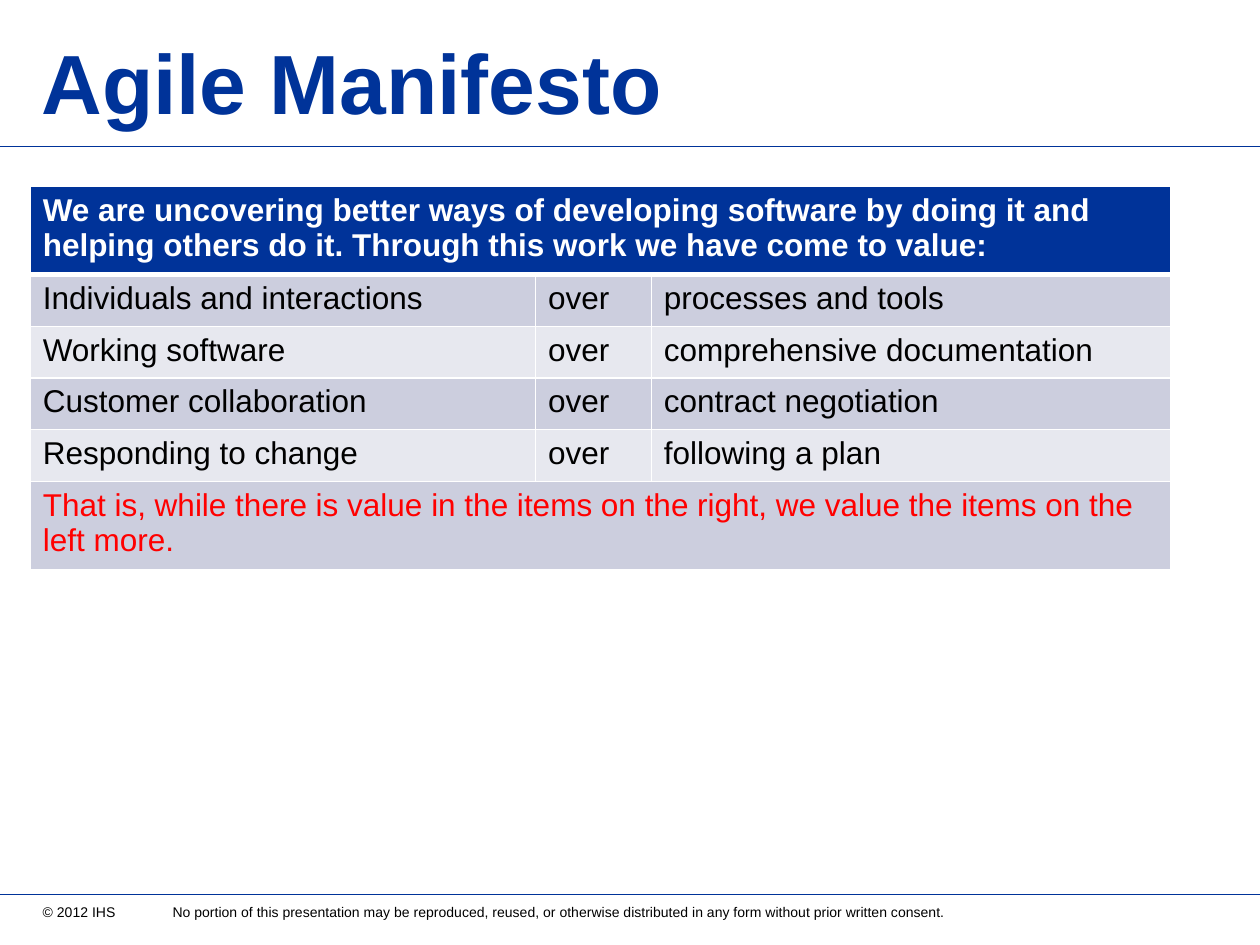
from dataclasses import dataclass

from lxml import etree
from pptx import Presentation
from pptx.dml.color import RGBColor
from pptx.enum.shapes import MSO_CONNECTOR
from pptx.enum.text import MSO_ANCHOR, MSO_AUTO_SIZE
from pptx.oxml.ns import qn
from pptx.util import Inches, Pt

STRAIGHT = MSO_CONNECTOR.STRAIGHT
BOTTOM, TOP = MSO_ANCHOR.BOTTOM, MSO_ANCHOR.TOP
FIT_SHAPE, NO_FIT = MSO_AUTO_SIZE.SHAPE_TO_FIT_TEXT, MSO_AUTO_SIZE.NONE

SLIDE_WIDTH, SLIDE_HEIGHT = 10, 7.5
RULE_HEIGHTS = (1.16, 7.1)
COLORS = {
    "navy": "003399",
    "white": "FFFFFF",
    "black": "000000",
    "red": "FF0000",
    "dark band": "CCCEDE",
    "light band": "E7E8EF",
}

TABLE_LEFT, TABLE_TOP = 0.24, 1.48
COLUMN_WIDTHS = (4.01, 0.92, 4.12)
ROW_HEIGHT, TWO_LINE_HEIGHT = 0.41, 0.65
THIN_BORDER, HEADER_BORDER = 1, 3


@dataclass(frozen=True)
class TextStyle:
    size: float
    color: str
    bold: bool = False


@dataclass(frozen=True)
class Label:
    text: str
    box: tuple[float, float, float, float]
    style: TextStyle
    frame: dict


@dataclass(frozen=True)
class TableRow:
    texts: tuple[str, ...]
    style: TextStyle
    fill: str

    @property
    def is_merged(self) -> bool:
        return len(self.texts) == 1


BODY = TextStyle(18, "black")
LABELS = (
    Label(
        "© 2012 IHS \t No portion of this presentation may be reproduced, reused, "
        "or otherwise distributed in any form without prior written consent.",
        (0.24, 7.12, 7.45, 0.24),
        TextStyle(8, "black"),
        {"word_wrap": False, "auto_size": FIT_SHAPE, "vertical_anchor": TOP},
    ),
    Label(
        "Agile Manifesto",
        (0.23, 0.15, 8.28, 0.94),
        TextStyle(48, "navy", True),
        {"word_wrap": True, "auto_size": NO_FIT, "vertical_anchor": BOTTOM},
    ),
)
VALUES = (
    ("Individuals and interactions", "processes and tools"),
    ("Working software", "comprehensive documentation"),
    ("Customer collaboration", "contract negotiation"),
    ("Responding to change", "following a plan"),
)
BANDS = ("dark band", "light band")
ROWS = (
    TableRow(
        ("We are uncovering better ways of developing software by doing it and "
         "helping others do it. Through this work we have come to value:",),
        TextStyle(18, "white", True),
        "navy",
    ),
    *(
        TableRow((preferred, "over", other), BODY, BANDS[index % 2])
        for index, (preferred, other) in enumerate(VALUES)
    ),
    TableRow(
        ("That is, while there is value in the items on the right, "
         "we value the items on the left more.",),
        TextStyle(18, "red"),
        "dark band",
    ),
)


def rgb(name: str) -> RGBColor:
    return RGBColor.from_string(COLORS[name])


def write_text(text_frame, text: str, style: TextStyle) -> None:
    paragraph = text_frame.paragraphs[0]
    run = paragraph.add_run()
    run.text = text
    font_values = {"name": "Arial", "size": Pt(style.size), "bold": style.bold}
    for attribute, value in font_values.items():
        setattr(run.font, attribute, value)
    run.font.color.rgb = rgb(style.color)


def add_rule(slide, height: float) -> None:
    """Draw a thin line across the full slide width."""
    y = Inches(height)
    rule = slide.shapes.add_connector(STRAIGHT, 0, y, Inches(SLIDE_WIDTH), y)
    rule.line.color.rgb = rgb("navy")
    rule.line.width = Pt(0.5)
    etree.SubElement(rule._element.spPr, qn("a:effectLst"))


def add_label(slide, label: Label) -> None:
    shape = slide.shapes.add_textbox(*map(Inches, label.box))
    for attribute, value in label.frame.items():
        setattr(shape.text_frame, attribute, value)
    write_text(shape.text_frame, label.text, label.style)


def set_borders(cell, top: float, bottom: float) -> None:
    """Add white borders; they must come before the cell's fill in the XML."""
    properties = cell._tc.get_or_add_tcPr()
    widths = {"lnL": THIN_BORDER, "lnR": THIN_BORDER, "lnT": top, "lnB": bottom}
    for tag, width in widths.items():
        line = etree.SubElement(properties, qn(f"a:{tag}"), w=str(Pt(width)))
        fill = etree.SubElement(line, qn("a:solidFill"))
        etree.SubElement(fill, qn("a:srgbClr"), val=COLORS["white"])


def add_values_table(slide) -> None:
    heights = [TWO_LINE_HEIGHT if row.is_merged else ROW_HEIGHT for row in ROWS]
    table = slide.shapes.add_table(
        len(ROWS), len(COLUMN_WIDTHS), Inches(TABLE_LEFT), Inches(TABLE_TOP),
        Inches(sum(COLUMN_WIDTHS)), Inches(sum(heights)),
    ).table
    for column, width in zip(table.columns, COLUMN_WIDTHS):
        column.width = Inches(width)
    for index, (row, height) in enumerate(zip(ROWS, heights)):
        table.rows[index].height = Inches(height)
        cells = list(table.rows[index].cells)
        if row.is_merged:
            cells[0].merge(cells[-1])
        for cell in cells:
            set_borders(
                cell,
                top=HEADER_BORDER if index == 1 else THIN_BORDER,
                bottom=HEADER_BORDER if index == 0 else THIN_BORDER,
            )
            cell.fill.solid()
            cell.fill.fore_color.rgb = rgb(row.fill)
        for cell, text in zip(cells, row.texts):
            write_text(cell.text_frame, text, row.style)


def main() -> None:
    presentation = Presentation()
    presentation.slide_width = Inches(SLIDE_WIDTH)
    presentation.slide_height = Inches(SLIDE_HEIGHT)
    slide = presentation.slides.add_slide(presentation.slide_layouts[6])
    for height in RULE_HEIGHTS:
        add_rule(slide, height)
    for label in LABELS:
        add_label(slide, label)
    add_values_table(slide)
    presentation.save("out.pptx")


if __name__ == "__main__":
    main()
